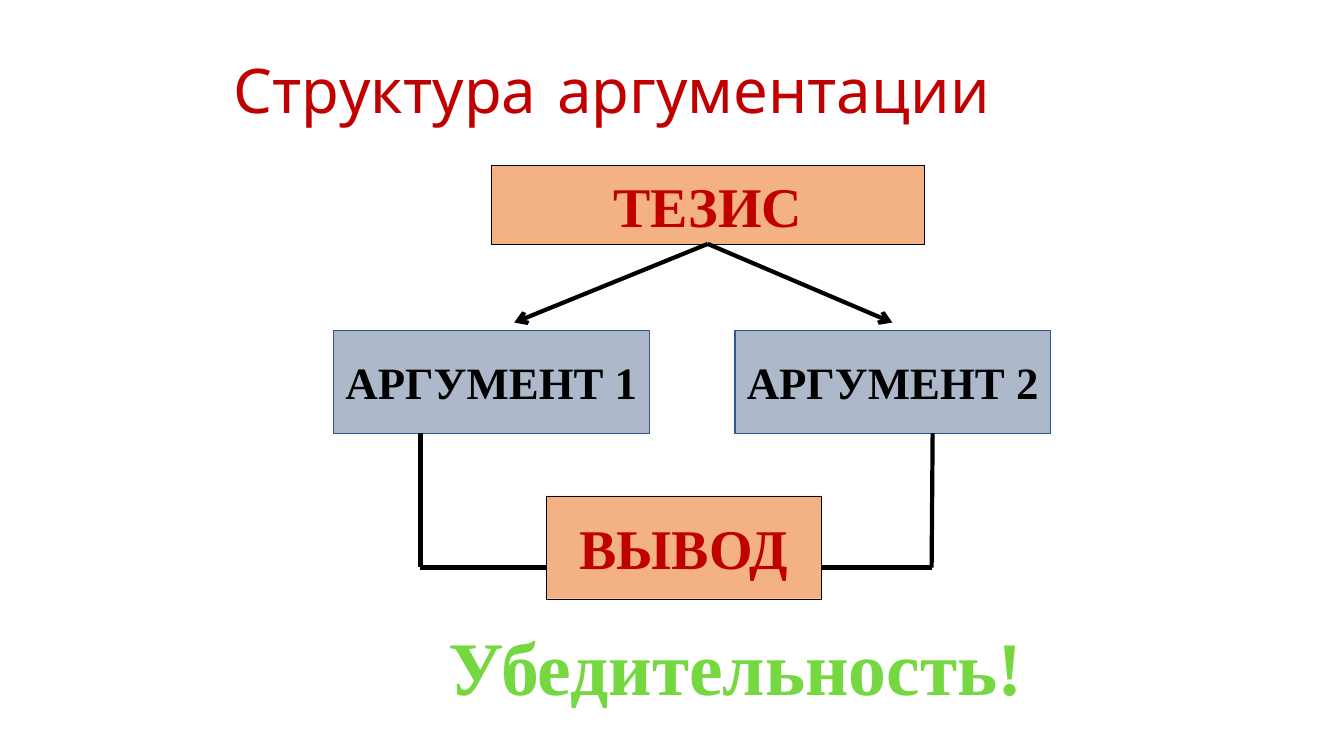
from dataclasses import dataclass

from lxml.etree import SubElement
from pptx import Presentation
from pptx.dml.color import RGBColor
from pptx.enum.shapes import MSO_CONNECTOR, MSO_SHAPE
from pptx.enum.text import MSO_ANCHOR, PP_ALIGN
from pptx.oxml.ns import qn
from pptx.shapes.autoshape import Shape
from pptx.slide import Slide
from pptx.util import Emu, Pt

EMU_PER_PX = 9144  # 100 px to the inch
BODY_FONT = "Times New Roman"
RED, BLACK, GREEN = "C00000", "000000", "75D840"
BOTTOM_SIDE = 2


@dataclass(frozen=True)
class Frame:
    left: int
    top: int
    width: int
    height: int


@dataclass(frozen=True)
class TextStyle:
    size: int
    color: str
    font: str = BODY_FONT
    bold: bool = True
    align: PP_ALIGN = PP_ALIGN.CENTER


@dataclass(frozen=True)
class BoxStyle:
    fill: str
    line: str
    line_width: float
    text: TextStyle


@dataclass(frozen=True)
class Box:
    text: str
    frame: Frame
    style: BoxStyle


@dataclass(frozen=True)
class Line:
    start: tuple[int, int]
    end: tuple[int, int]


KEY_STYLE = BoxStyle("F4B183", BLACK, 0.25, TextStyle(40, RED))
ARGUMENT_STYLE = BoxStyle("ADB9CA", "325491", 1, TextStyle(32, BLACK))

THESIS = Box("ТЕЗИС", Frame(487, 164, 430, 78), KEY_STYLE)
SUPPORTING_BOXES = [
    Box("АРГУМЕНТ 1", Frame(331, 328, 313, 102), ARGUMENT_STYLE),
    Box("ВЫВОД", Frame(542, 492, 273, 102), KEY_STYLE),
    Box("АРГУМЕНТ 2", Frame(729, 328, 313, 102), ARGUMENT_STYLE),
]
ARROWS = [Line((702, 242), (510, 320)), Line((702, 242), (885, 320))]
BRACKETS = [
    Line((417, 430), (417, 563)),
    Line((417, 563), (542, 563)),
    Line((925, 430), (924, 563)),
    Line((815, 563), (924, 563)),
]


def px(value: int) -> Emu:
    return Emu(value * EMU_PER_PX)


def rgb(color: str) -> RGBColor:
    return RGBColor.from_string(color)


def place(frame: Frame) -> tuple[Emu, Emu, Emu, Emu]:
    return px(frame.left), px(frame.top), px(frame.width), px(frame.height)


def write_text(shape: Shape, text: str, style: TextStyle, wrap: bool = False) -> None:
    text_frame = shape.text_frame
    text_frame.word_wrap = wrap
    text_frame.vertical_anchor = MSO_ANCHOR.MIDDLE
    paragraph = text_frame.paragraphs[0]
    paragraph.alignment = style.align
    run = paragraph.add_run()
    run.text = text
    run.font.name = style.font
    run.font.size = Pt(style.size)
    run.font.bold = style.bold
    run.font.color.rgb = rgb(style.color)


def add_text(slide: Slide, text: str, frame: Frame, style: TextStyle, wrap: bool = False) -> Shape:
    shape = slide.shapes.add_textbox(*place(frame))
    write_text(shape, text, style, wrap)
    return shape


def add_box(slide: Slide, box: Box) -> Shape:
    shape = slide.shapes.add_shape(MSO_SHAPE.RECTANGLE, *place(box.frame))
    shape.shadow.inherit = False
    shape.fill.solid()
    shape.fill.fore_color.rgb = rgb(box.style.fill)
    shape.line.color.rgb = rgb(box.style.line)
    shape.line.width = Pt(box.style.line_width)
    write_text(shape, box.text, box.style.text)
    return shape


def add_line(slide: Slide, line: Line, source: Shape | None = None) -> None:
    """Draw a line; one that leaves a source box gets glued to it and an arrowhead."""
    connector = slide.shapes.add_connector(
        MSO_CONNECTOR.STRAIGHT, *map(px, line.start + line.end)
    )
    connector.line.color.rgb = rgb(BLACK)
    connector.line.width = Pt(3)
    if source is not None:
        connector.begin_connect(source, BOTTOM_SIDE)
        SubElement(connector.line._get_or_add_ln(), qn("a:tailEnd"), type="arrow")
    SubElement(connector._element.spPr, qn("a:effectLst"))


def main() -> None:
    presentation = Presentation()
    presentation.slide_width = px(1333)
    presentation.slide_height = px(750)
    slide = presentation.slides.add_slide(presentation.slide_layouts[6])

    title_style = TextStyle(44, RED, "Comic Neue", bold=False, align=PP_ALIGN.LEFT)
    title = add_text(
        slide, "Структура аргументации", Frame(222, 20, 1150, 145), title_style, wrap=True
    )
    title.text_frame.paragraphs[0].line_spacing = 0.9

    thesis = add_box(slide, THESIS)
    for box in SUPPORTING_BOXES:
        add_box(slide, box)
    for arrow in ARROWS:
        add_line(slide, arrow, thesis)
    for bracket in BRACKETS:
        add_line(slide, bracket)

    add_text(slide, "Убедительность!", Frame(432, 609, 595, 101), TextStyle(54, GREEN))
    presentation.save("out.pptx")


if __name__ == "__main__":
    main()
